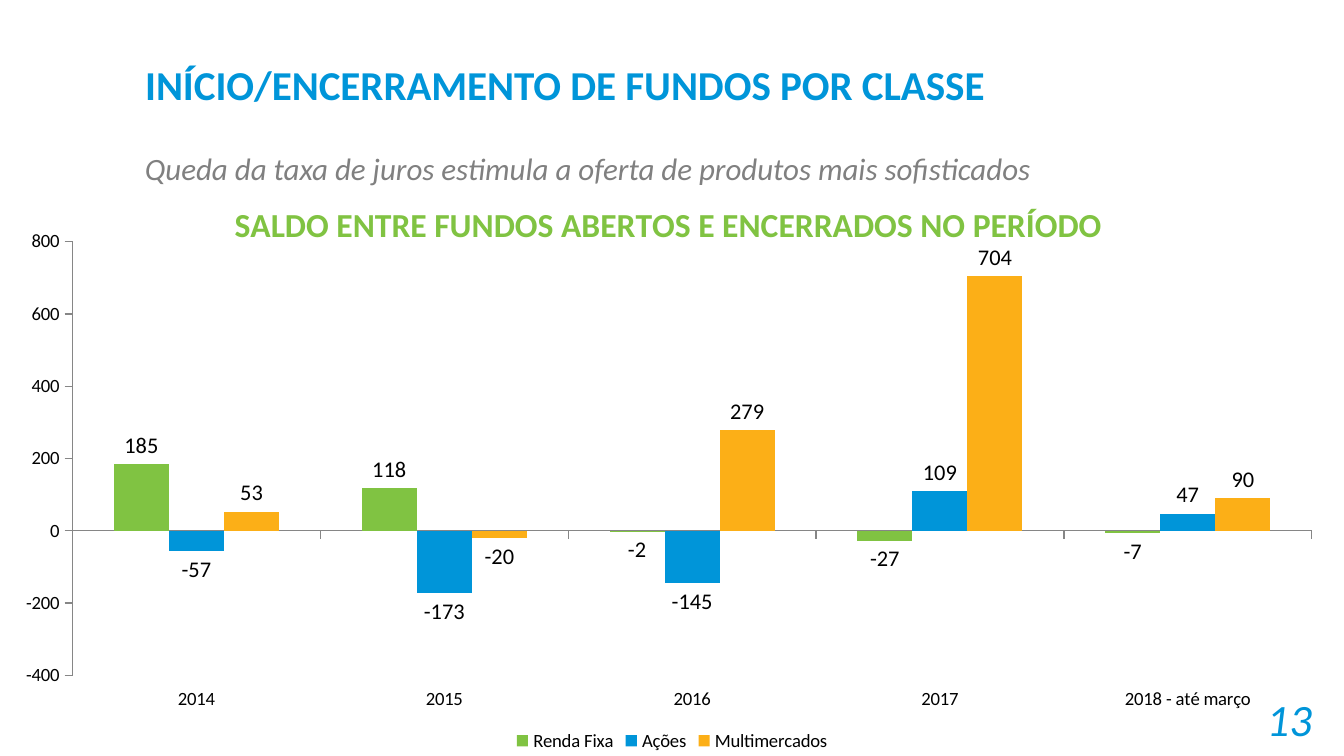
from typing import NamedTuple

from lxml.etree import SubElement
from pptx import Presentation
from pptx.chart.data import CategoryChartData
from pptx.dml.color import RGBColor
from pptx.enum.chart import XL_CHART_TYPE as ChartType
from pptx.enum.chart import XL_LABEL_POSITION as LabelPos
from pptx.enum.chart import XL_LEGEND_POSITION as LegendPos
from pptx.enum.chart import XL_TICK_LABEL_POSITION as TickLabelPos
from pptx.enum.chart import XL_TICK_MARK as TickMark
from pptx.enum.text import MSO_ANCHOR as Anchor
from pptx.enum.text import PP_ALIGN as Align
from pptx.oxml.ns import qn
from pptx.util import Inches, Pt

FONT = "Calibri"
BLUE, GREEN, ORANGE = "0095D9", "80C342", "FCAF17"
GRAY, BLACK, AXIS = "808080", "000000", "868686"
YEARS = ["2014", "2015", "2016", "2017", "2018 - até março"]


class Text(NamedTuple):
    text: str
    box: tuple[float, float, float, float]
    size: float
    color: str
    bold: bool = False
    italic: bool = False
    align: Align = Align.LEFT
    anchor: Anchor = Anchor.MIDDLE


class FundClass(NamedTuple):
    name: str
    balances: list[int]
    color: str


TITLE = Text("INÍCIO/ENCERRAMENTO DE FUNDOS POR CLASSE", (0.98, 0.33, 7.01, 0.59), 22, BLUE, bold=True)
TEXTS = [
    Text("Queda da taxa de juros estimula a oferta de produtos mais sofisticados",
         (0.98, 1.06, 7.01, 0.35), 16.6, GRAY, italic=True, anchor=Anchor.TOP),
    Text("13", (7.34, 5.2, 2.52, 0.3), 24, BLUE, italic=True, align=Align.RIGHT),
]
FUNDS = [
    FundClass("Renda Fixa", [185, 118, -2, -27, -7], GREEN),
    FundClass("Ações", [-57, -173, -145, 109, 47], BLUE),
    FundClass("Multimercados", [53, -20, 279, 704, 90], ORANGE),
]


def rgb(color: str) -> RGBColor:
    return RGBColor.from_string(color)


def set_font(font, size: float, color: str, bold: bool = False, italic: bool = False) -> None:
    font.name, font.size = FONT, Pt(size)
    font.bold, font.italic = bold, italic
    font.color.rgb = rgb(color)


def write_text(sp, item: Text) -> None:
    sp.left, sp.top, sp.width, sp.height = map(Inches, item.box)
    tf = sp.text_frame
    tf.word_wrap = True
    tf.vertical_anchor = item.anchor
    tf.margin_left = tf.margin_right = Inches(0.1)
    tf.margin_top = tf.margin_bottom = Inches(0.05)
    p = tf.paragraphs[0]
    p.text, p.alignment = item.text, item.align
    set_font(p.font, item.size, item.color, item.bold, item.italic)


def set_layout(parent, **values: str | float) -> None:
    layout = parent.find(qn("c:layout"))
    if layout is None:
        layout = parent.makeelement(qn("c:layout"))
        parent.insert(0 if parent.find(qn("c:tx")) is None else 1, layout)
    manual = SubElement(layout, qn("c:manualLayout"))
    for tag, value in values.items():
        SubElement(manual, qn(f"c:{tag}")).set("val", str(value))


def style_axis(axis) -> None:
    axis.has_major_gridlines = False
    axis.major_tick_mark = TickMark.OUTSIDE
    axis.minor_tick_mark = TickMark.NONE
    axis.format.line.color.rgb = rgb(AXIS)
    axis.format.line.width = Pt(0.75)
    set_font(axis.tick_labels.font, 10, BLACK)


def add_balance_chart(s) -> None:
    data = CategoryChartData()
    data.categories = YEARS
    for fund in FUNDS:
        data.add_series(fund.name, fund.balances)
    chart = s.shapes.add_chart(ChartType.COLUMN_CLUSTERED, Inches(0), Inches(1.32),
                               Inches(10), Inches(4.31), data).chart
    set_font(chart.font, 10, BLACK)

    title = chart.chart_title
    p = title.text_frame.paragraphs[0]
    p.text = "SALDO ENTRE FUNDOS ABERTOS E ENCERRADOS NO PERÍODO"
    set_font(p.font, 18, GREEN, bold=True)
    set_layout(title.element, xMode="edge", yMode="edge", x=0.17, y=0.03)
    title.element.find(qn("c:overlay")).set("val", "1")

    set_layout(chart.element.find(".//" + qn("c:plotArea")), layoutTarget="inner",
               xMode="edge", yMode="edge", x=0.054, y=0.111, w=0.922, h=0.749)
    style_axis(chart.category_axis)
    chart.category_axis.tick_label_position = TickLabelPos.LOW
    style_axis(chart.value_axis)

    chart.has_legend = True
    chart.legend.position = LegendPos.BOTTOM
    chart.legend.include_in_layout = False
    set_font(chart.legend.font, 10, BLACK)

    plot = chart.plots[0]
    plot.gap_width, plot.overlap = 150, 0
    plot.vary_by_categories = False
    for series, fund in zip(plot.series, FUNDS):
        series.invert_if_negative = False
        series.format.fill.solid()
        series.format.fill.fore_color.rgb = rgb(fund.color)
        labels = series.data_labels
        labels.show_value = True
        labels.position = LabelPos.OUTSIDE_END
        set_font(labels.font, 12, BLACK)


def main() -> None:
    prs = Presentation()
    prs.slide_width = Inches(10)
    prs.slide_height = prs.slide_width * 9 // 16
    s = prs.slides.add_slide(prs.slide_layouts[5])
    write_text(s.shapes.title, TITLE)
    for item in TEXTS:
        write_text(s.shapes.add_textbox(*map(Inches, item.box)), item)
    add_balance_chart(s)
    prs.save("out.pptx")


if __name__ == "__main__":
    main()
